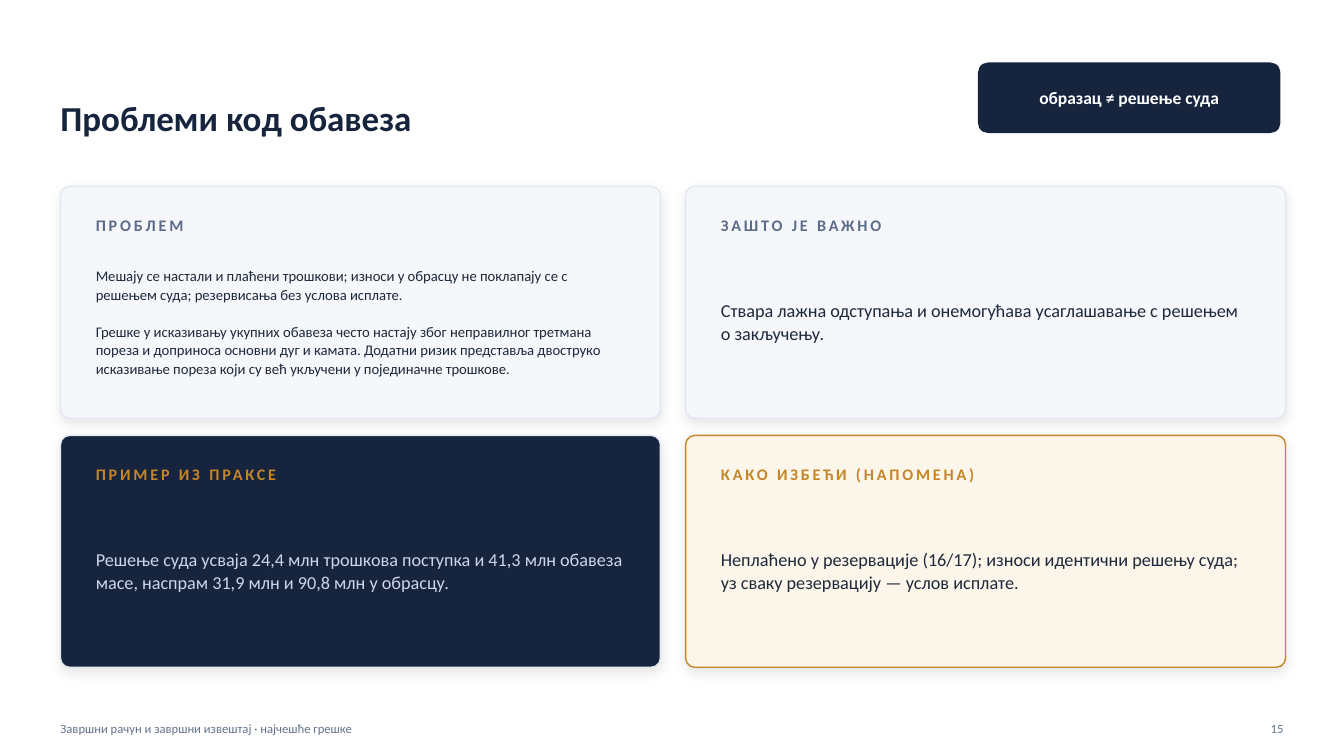
from dataclasses import dataclass

from lxml.etree import SubElement
from pptx import Presentation
from pptx.dml.color import RGBColor
from pptx.enum.shapes import MSO_SHAPE
from pptx.enum.text import MSO_ANCHOR, MSO_AUTO_SIZE, PP_ALIGN
from pptx.oxml.ns import qn
from pptx.util import Inches, Pt

# Content
TITLE = "Проблеми код обавеза"
CHIP = "образац ≠ решење суда"
FOOTER = "Завршни рачун и завршни извештај · најчешће грешке"
PAGE = "15"
CARDS = [  # heading, paragraphs, style
    ("ПРОБЛЕМ",
     ["Мешају се настали и плаћени трошкови; износи у обрасцу не поклапају се с "
      "решењем суда; резервисања без услова исплате.",
      "Грешке у исказивању укупних обавеза често настају због неправилног третмана "
      "пореза и доприноса основни дуг и камата. Додатни ризик представља двоструко "
      "исказивање пореза који су већ укључени у појединачне трошкове."], "light"),
    ("ЗАШТО ЈЕ ВАЖНО",
     ["Ствара лажна одступања и онемогућава усаглашавање с решењем о закључењу."],
     "light"),
    ("ПРИМЕР ИЗ ПРАКСЕ",
     ["Решење суда усваја 24,4 млн трошкова поступка и 41,3 млн обавеза масе, "
      "наспрам 31,9 млн и 90,8 млн у обрасцу."], "dark"),
    ("КАКО ИЗБЕЋИ (НАПОМЕНА)",
     ["Неплаћено у резервације (16/17); износи идентични решењу суда; уз сваку "
      "резервацију — услов исплате."], "note"),
]


@dataclass(frozen=True)
class Theme:
    font: str = "Calibri"
    navy: str = "16243D"
    ink: str = "1E293B"
    slate: str = "64748B"
    muted: str = "5B6B89"
    gold: str = "C68526"
    pale: str = "C9D6EE"
    mist: str = "F5F7FB"
    cream: str = "FBF5EA"
    border: str = "E2E8F0"
    white: str = "FFFFFF"
    title: float = 25
    chip: float = 12.5
    heading: float = 11.5
    body: float = 13
    dense: float = 10.5
    footer: float = 9


T = Theme()
STYLES = {  # fill, line, heading colour, body colour
    "light": (T.mist, T.border, T.muted, T.ink),
    "dark": (T.navy, T.border, T.gold, T.pale),
    "note": (T.cream, T.gold, T.gold, T.ink),
}

# Layout, in inches
LEFT, TOP = 0.6, 1.85
CARD_W, CARD_H = 5.95, 2.3
GAP_X, GAP_Y = 0.25, 0.17
PAD = 0.35
CORNER = 0.09

prs = Presentation()
prs.slide_width, prs.slide_height = Inches(13.33), Inches(7.5)
s = prs.slides.add_slide(prs.slide_layouts[5])


def write(sp, *lines, size, color, bold=False, align=PP_ALIGN.LEFT,
          spacing=None, tracking=None, gap=0):
    """Fill a shape with formatted paragraphs, centred vertically."""
    tf = sp.text_frame
    tf.word_wrap, tf.auto_size = True, MSO_AUTO_SIZE.NONE
    tf.vertical_anchor = MSO_ANCHOR.MIDDLE
    tf.margin_left = tf.margin_right = tf.margin_top = tf.margin_bottom = 0
    for i, line in enumerate(lines):
        p = tf.add_paragraph() if i else tf.paragraphs[0]
        p.alignment = align
        if spacing:
            p.line_spacing = spacing
        if i:
            p.space_before = Pt(gap)
        r = p.add_run()
        r.text = line
        r.font.name, r.font.size, r.font.bold = T.font, Pt(size), bold
        r.font.color.rgb = RGBColor.from_string(color)
        if tracking:
            r.font._element.set("spc", str(tracking * 100))


def text_box(x, y, w, h, *lines, **fmt):
    sp = s.shapes.add_textbox(Inches(x), Inches(y), Inches(w), Inches(h))
    write(sp, *lines, **fmt)


def panel(x, y, w, h, fill, line=None, shadow=False):
    sp = s.shapes.add_shape(MSO_SHAPE.ROUNDED_RECTANGLE,
                            Inches(x), Inches(y), Inches(w), Inches(h))
    sp.adjustments[0] = (CORNER if line else 0.1) / h
    sp.fill.solid()
    sp.fill.fore_color.rgb = RGBColor.from_string(fill)
    if line:
        sp.line.color.rgb = RGBColor.from_string(line)
        sp.line.width = Pt(1)
    else:
        sp.line.fill.background()
    sp.shadow.inherit = False
    if shadow:
        effects = sp._element.spPr.find(qn("a:effectLst"))
        outer = SubElement(effects, qn("a:outerShdw"), blurRad=str(Pt(9)),
                           dist=str(Pt(3)), dir="5400000", algn="bl",
                           rotWithShape="0")
        tint = SubElement(outer, qn("a:srgbClr"), val="000000")
        SubElement(tint, qn("a:alpha"), val="10000")
    return sp


# Title
title = s.shapes.title
title.left, title.top = Inches(LEFT), Inches(0.74)
title.width, title.height = Inches(12.1), Inches(0.85)
write(title, TITLE, size=T.title, color=T.navy, bold=True)

# Footer and page number
text_box(LEFT, 7.08, 9, 0.3, FOOTER, size=T.footer, color=T.slate)
text_box(12.23, 7.08, 0.5, 0.3, PAGE, size=T.footer, color=T.slate,
         align=PP_ALIGN.RIGHT)

# Key message
write(panel(9.7, 0.62, 3, 0.7, T.navy), CHIP, size=T.chip, color=T.white,
      bold=True, align=PP_ALIGN.CENTER)

# Two by two cards
for i, (heading, body, style) in enumerate(CARDS):
    row, col = divmod(i, 2)
    x = LEFT + col * (CARD_W + GAP_X)
    y = TOP + row * (CARD_H + GAP_Y)
    fill, line, heading_color, body_color = STYLES[style]
    panel(x, y, CARD_W, CARD_H, fill, line, shadow=True)
    text_w = CARD_W - 2 * PAD
    text_box(x + PAD, y + 0.22, text_w, 0.32, heading, size=T.heading,
             color=heading_color, bold=True, tracking=2)
    text_box(x + PAD, y + 0.58, text_w, 1.52, *body,
             size=T.dense if len(body) > 1 else T.body,
             color=body_color, spacing=1.05, gap=13.3)

prs.save("out.pptx")
